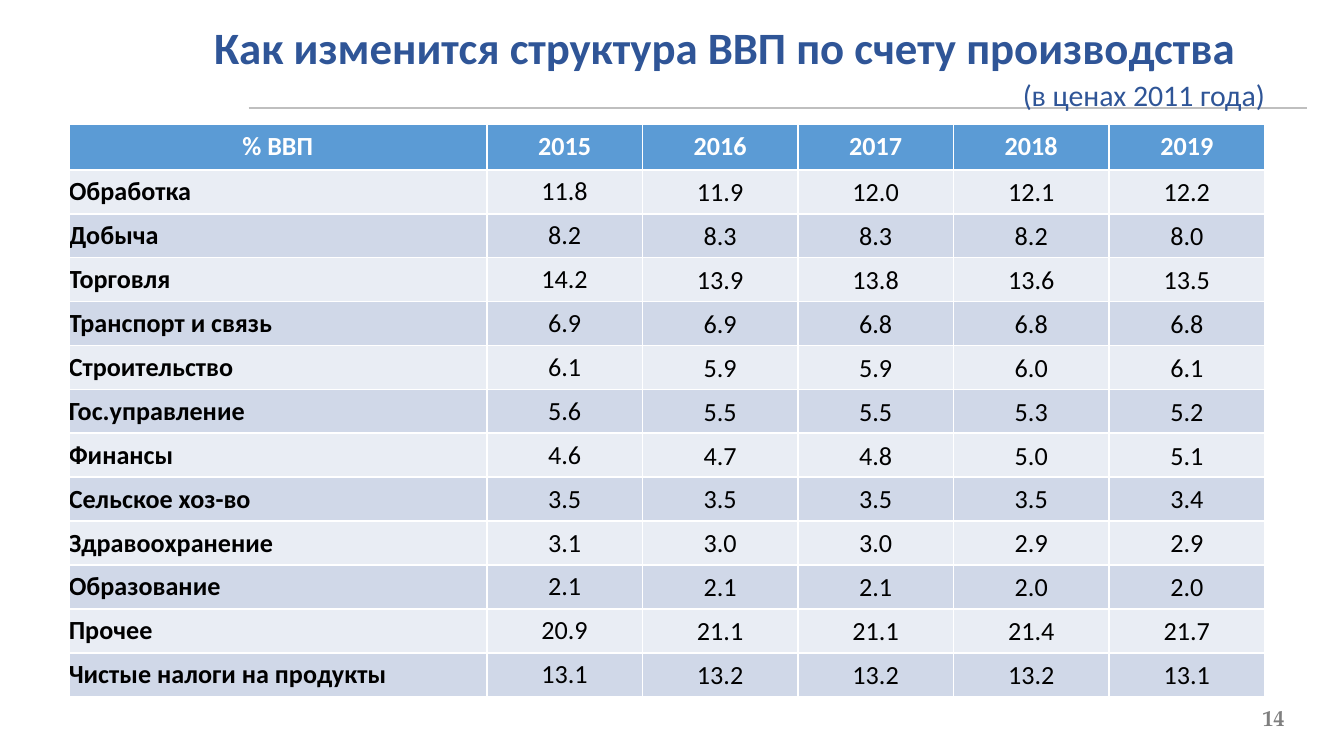
from lxml.etree import SubElement
from pptx import Presentation
from pptx.dml.color import RGBColor
from pptx.enum.shapes import MSO_CONNECTOR
from pptx.enum.text import MSO_ANCHOR, PP_ALIGN
from pptx.oxml.ns import qn
from pptx.util import Cm, Pt

# Content
TITLE = "Как изменится структура ВВП по счету производства"
SUBTITLE = "(в ценах 2011 года)"
PAGE = "14"
HEADER = ("% ВВП", "2015", "2016", "2017", "2018", "2019")
ROWS = [
    ("Обработка", "11.8", "11.9", "12.0", "12.1", "12.2"),
    ("Добыча", "8.2", "8.3", "8.3", "8.2", "8.0"),
    ("Торговля", "14.2", "13.9", "13.8", "13.6", "13.5"),
    ("Транспорт и связь", "6.9", "6.9", "6.8", "6.8", "6.8"),
    ("Строительство", "6.1", "5.9", "5.9", "6.0", "6.1"),
    ("Гос.управление", "5.6", "5.5", "5.5", "5.3", "5.2"),
    ("Финансы", "4.6", "4.7", "4.8", "5.0", "5.1"),
    ("Сельское хоз-во", "3.5", "3.5", "3.5", "3.5", "3.4"),
    ("Здравоохранение", "3.1", "3.0", "3.0", "2.9", "2.9"),
    ("Образование", "2.1", "2.1", "2.1", "2.0", "2.0"),
    ("Прочее", "20.9", "21.1", "21.1", "21.4", "21.7"),
    ("Чистые налоги на продукты", "13.1", "13.2", "13.2", "13.2", "13.1"),
]
COLORS = {
    "title": "2F5597", "rule": "BFBFBF", "page": "7F7F7F", "header": "5B9BD5",
    "light": "E9EDF4", "dark": "D0D8E8", "white": "FFFFFF", "black": "000000",
}
FONT = "Calibri"
LABEL_W, YEAR_W = Cm(7.9), Cm(2.94)
HEADER_H, ROW_H = Cm(0.87), Cm(0.83)


def rgb(name):
    return RGBColor.from_string(COLORS[name])


def style(p, size, color, bold=False, align=PP_ALIGN.LEFT, font=FONT):
    p.alignment = align
    for r in p.runs:
        r.font.name, r.font.size, r.font.bold = font, Pt(size), bold
        r.font.color.rgb = rgb(color)


def add_text(s, box, text, *look, **kw):
    tf = s.shapes.add_textbox(*map(Cm, box)).text_frame
    tf.word_wrap = True
    p = tf.paragraphs[0]
    p.text = text
    style(p, *look, **kw)
    return tf


def zero_margins(o):
    o.margin_left = o.margin_top = o.margin_right = o.margin_bottom = 0
    o.vertical_anchor = MSO_ANCHOR.MIDDLE


def add_borders(cell):
    tcPr = cell._tc.get_or_add_tcPr()
    for side in ("lnL", "lnR", "lnT", "lnB"):
        ln = SubElement(tcPr, qn(f"a:{side}"), w=str(Pt(1)))
        fill = SubElement(ln, qn("a:solidFill"))
        SubElement(fill, qn("a:srgbClr"), val=COLORS["white"])


prs = Presentation()
prs.slide_width, prs.slide_height = Cm(25.4), Cm(14.29)
s = prs.slides.add_slide(prs.slide_layouts[6])

# Rule under the title
rule = s.shapes.add_connector(MSO_CONNECTOR.STRAIGHT, Cm(4.7), Cm(2.04), Cm(24.71), Cm(2.04))
rule.line.color.rgb = rgb("rule")
rule.line.width = Pt(1)
SubElement(rule._element.spPr, qn("a:effectLst"))

# Page number
tf = add_text(s, (23.06, 13.44, 1.22, 0.25), PAGE, 12, "page", True,
              align=PP_ALIGN.RIGHT, font="TeX Gyre Pagella")
tf.word_wrap = False
zero_margins(tf)

# Title with a first-line indent
tf = add_text(s, (2.06, 0.25, 22, 1.28), TITLE, 24, "title", True, align=PP_ALIGN.CENTER)
tf.paragraphs[0]._p.get_or_add_pPr().set("indent", str(Cm(1.27)))

# Table
table = s.shapes.add_table(
    len(ROWS) + 1, len(HEADER), Cm(1.3), Cm(2.34),
    LABEL_W + YEAR_W * (len(HEADER) - 1), HEADER_H + ROW_H * len(ROWS)).table
for j, col in enumerate(table.columns):
    col.width = YEAR_W if j else LABEL_W
for i, values in enumerate([HEADER] + ROWS):
    table.rows[i].height = ROW_H if i else HEADER_H
    fill = "header" if i == 0 else "light" if i % 2 else "dark"
    for j, value in enumerate(values):
        cell = table.cell(i, j)
        zero_margins(cell)
        if i and j > 1:
            cell.margin_left = cell.margin_top = cell.margin_right = Cm(0.03)
        add_borders(cell)
        cell.fill.solid()
        cell.fill.fore_color.rgb = rgb(fill)
        p = cell.text_frame.paragraphs[0]
        p.text = value
        style(p, 14, "black" if i else "white", i == 0 or j == 0,
              PP_ALIGN.LEFT if i and j == 0 else PP_ALIGN.CENTER)

# Price basis
add_text(s, (19.08, 1.32, 5.38, 0.94), SUBTITLE, 16, "title")

prs.save("out.pptx")
